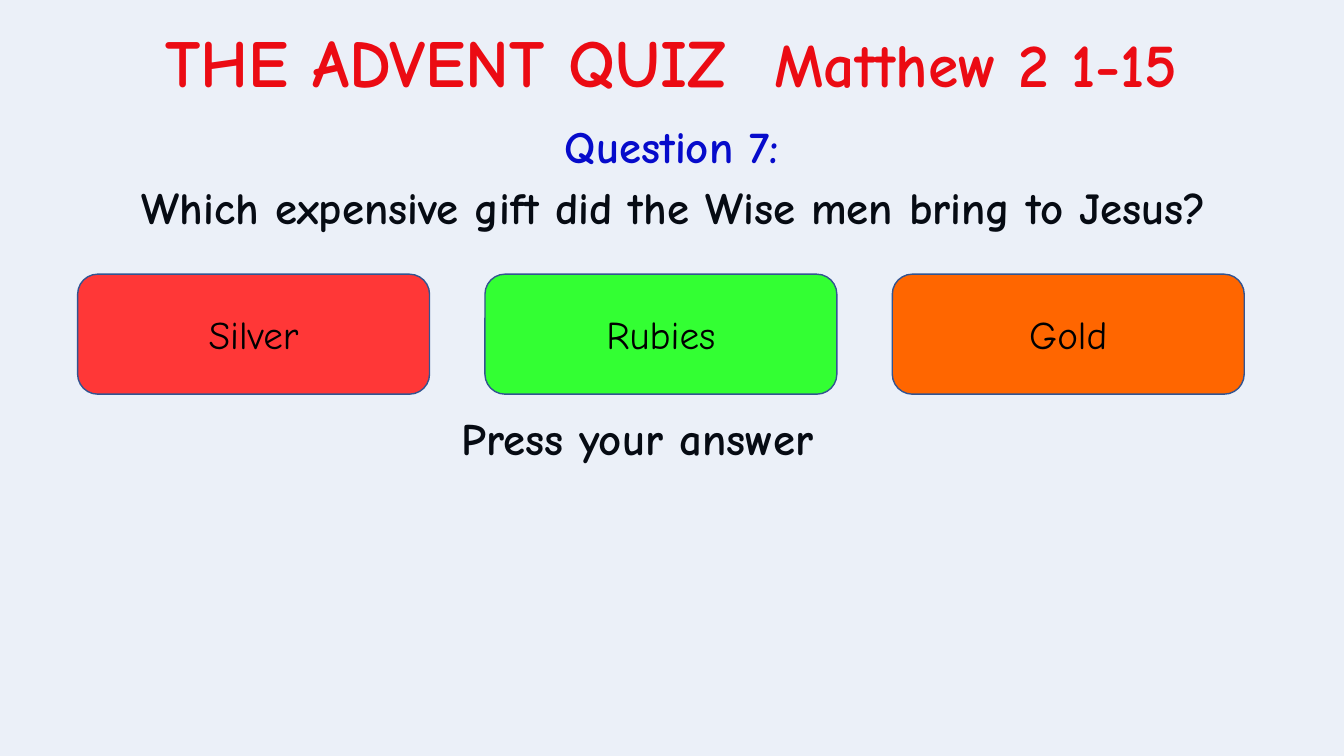
from dataclasses import dataclass

from lxml.etree import SubElement
from pptx import Presentation
from pptx.dml.color import RGBColor
from pptx.enum.shapes import MSO_SHAPE
from pptx.enum.text import MSO_ANCHOR, PP_ALIGN
from pptx.oxml.ns import qn
from pptx.util import Inches, Pt


@dataclass(frozen=True)
class Theme:
    """Colours, font and type sizes of the quiz."""
    font: str = "Comic Neue"
    title: str = "FF0000"
    label: str = "0000CC"
    ink: str = "000000"
    edge: str = "325491"
    tint: str = "4472C4"
    big: int = 48
    verse: int = 44
    body: int = 32
    card: int = 28


THEME = Theme()
ANSWERS = [("Silver", "FF3737"), ("Rubies", "33FF33"), ("Gold", "FF6600")]


def style(run, size, color, bold=True):
    """Set the font of one run."""
    run.font.name = THEME.font
    run.font.size = Pt(size)
    run.font.bold = bold
    run.font.color.rgb = RGBColor.from_string(color)


def add_text(slide, box, parts, color, align=PP_ALIGN.CENTER, wrap=True):
    """Add a line of text from (words, size) parts and return its paragraph."""
    frame = slide.shapes.add_textbox(*map(Inches, box)).text_frame
    frame.word_wrap = wrap
    line = frame.paragraphs[0]
    line.alignment = align
    for words, size in parts:
        run = line.add_run()
        run.text = words
        style(run, size, color)
    return line


def add_block(slide, kind, box, color):
    """Add a filled shape without shadow."""
    block = slide.shapes.add_shape(kind, *box)
    block.shadow.inherit = False
    block.fill.solid()
    block.fill.fore_color.rgb = RGBColor.from_string(color)
    return block


def add_tint(slide, width, height):
    """Lay a pale see-through tint over the whole slide."""
    tint = add_block(slide, MSO_SHAPE.RECTANGLE, (0, 0, width, height), THEME.tint)
    tint.line.fill.background()
    color = tint.fill._xPr.find(qn("a:solidFill"))[0]
    SubElement(color, qn("a:alpha"), val="10000")


def add_card(slide, left, words, color):
    """Add one answer card."""
    box = map(Inches, (left, 2.72, 3.49, 1.19))
    card = add_block(slide, MSO_SHAPE.ROUNDED_RECTANGLE, box, color)
    card.line.color.rgb = RGBColor.from_string(THEME.edge)
    card.line.width = Pt(1)
    frame = card.text_frame
    frame.text = words
    frame.vertical_anchor = MSO_ANCHOR.MIDDLE
    line = frame.paragraphs[0]
    line.alignment = PP_ALIGN.CENTER
    style(line.runs[0], THEME.card, THEME.ink, bold=False)


def main():
    """Build and save the quiz slide."""
    deck = Presentation()
    deck.slide_width, deck.slide_height = Inches(13.33), Inches(7.5)
    slide = deck.slides.add_slide(deck.slide_layouts[6])

    title = [("THE ADVENT QUIZ  ", THEME.big), ("Matthew 2 1-15", THEME.verse)]
    add_text(slide, (0.37, 0.15, 12.58, 0.91), title, THEME.title, wrap=False)
    add_text(slide, (4.46, 1.13, 4.41, 0.64),
             [("Question 7:", THEME.body)], THEME.label)
    ask = add_text(slide, (0.24, 1.77, 12.9, 1.19),
                   [("Which expensive gift did the Wise men bring to Jesus?", THEME.body)],
                   THEME.ink)
    ask.line_spacing = Pt(36)
    press = add_text(slide, (4.48, 4.09, 6.73, 0.72),
                     [("Press your answer", THEME.body)], THEME.ink, PP_ALIGN.LEFT)
    press.line_spacing = 0.9

    add_tint(slide, deck.slide_width, deck.slide_height)
    for index, (words, color) in enumerate(ANSWERS):
        add_card(slide, 0.77 + 4.04 * index, words, color)
    deck.save("out.pptx")


if __name__ == "__main__":
    main()
